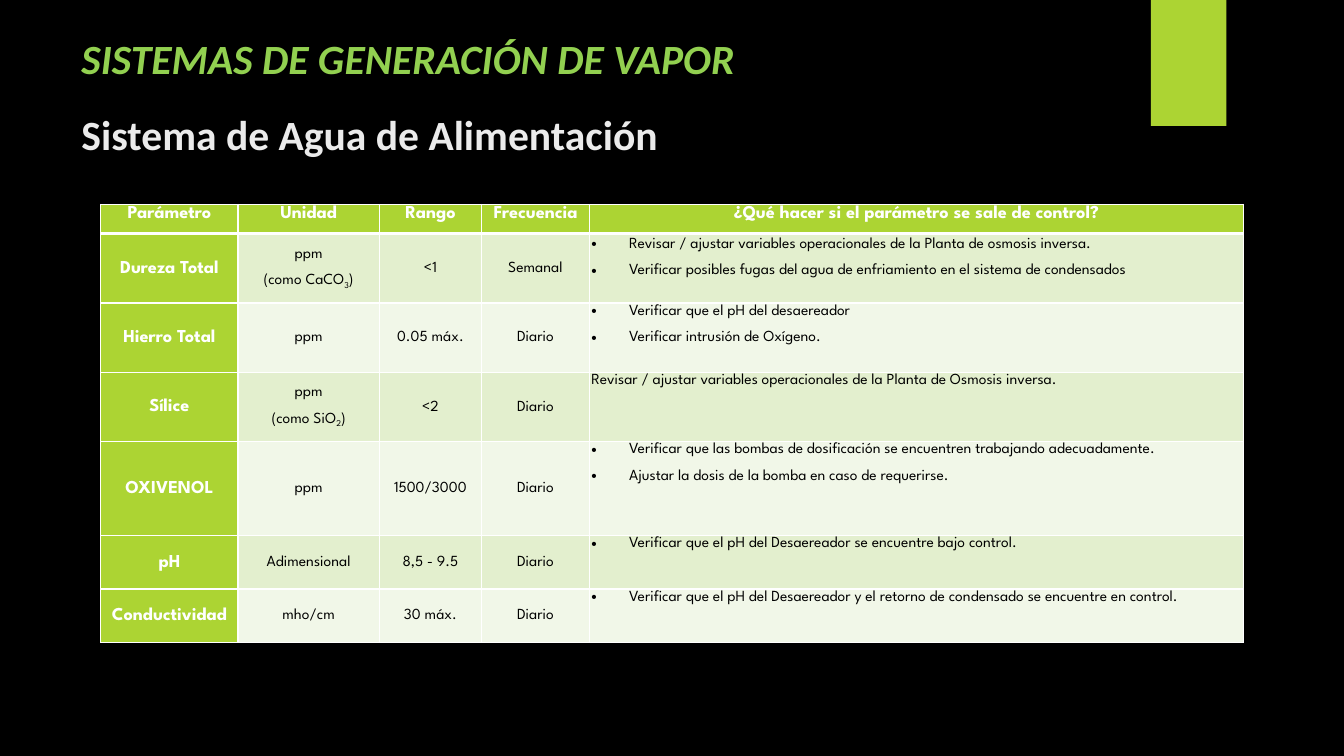
from lxml.etree import SubElement
from pptx import Presentation
from pptx.dml.color import RGBColor
from pptx.enum.shapes import MSO_SHAPE
from pptx.enum.text import MSO_ANCHOR, PP_ALIGN
from pptx.oxml.ns import qn
from pptx.util import Pt

BLACK = RGBColor(0x00, 0x00, 0x00)
WHITE = RGBColor(0xFF, 0xFF, 0xFF)
LIME = RGBColor(0xAC, 0xD4, 0x33)
TITLE_GREEN = RGBColor(0x92, 0xD0, 0x50)
TITLE_GREY = RGBColor(0xEB, 0xEB, 0xEB)
BANDS = (RGBColor(0xE3, 0xEF, 0xCE), RGBColor(0xF1, 0xF7, 0xE8))

HEADER_RULE = 2
COL_WIDTHS = (98, 101, 73, 77, 467)
ROW_HEIGHTS = (20.9, 49.5, 49.5, 49.5, 67, 38.3, 38.3)
HEADER = ("Parámetro", "Unidad", "Rango", "Frecuencia",
          "¿Qué hacer si el parámetro se sale de control?")
# An underscore puts the next character in subscript.
PARAMETERS = (
    ("Dureza Total", ["ppm", "(como CaCO_3)"], "<1", "Semanal",
     ["Revisar / ajustar variables operacionales de la Planta de osmosis inversa.",
      "Verificar posibles fugas del agua de enfriamiento en el sistema de condensados"]),
    ("Hierro Total", ["ppm"], "0.05 máx.", "Diario",
     ["Verificar que el pH del desaereador", "Verificar intrusión de Oxígeno."]),
    ("Sílice", ["ppm", "(como SiO_2)"], "<2", "Diario",
     "Revisar / ajustar variables operacionales de la Planta de Osmosis inversa."),
    ("OXIVENOL", ["ppm"], "1500/3000", "Diario",
     ["Verificar que las bombas de dosificación se encuentren trabajando adecuadamente.",
      "Ajustar la dosis de la bomba en caso de requerirse."]),
    ("pH", ["Adimensional"], "8,5 - 9.5", "Diario",
     ["Verificar que el pH del Desaereador se encuentre bajo control."]),
    ("Conductividad", ["mho/cm"], "30 máx.", "Diario",
     ["Verificar que el pH del Desaereador y el retorno de condensado se encuentre en control."]),
)


def add_bullet(p):
    pPr = p._p.get_or_add_pPr()
    pPr.set("marL", str(Pt(27)))
    pPr.set("indent", str(-Pt(27)))
    SubElement(pPr, qn("a:buFont"), typeface="Arial")
    SubElement(pPr, qn("a:buChar"), char="•")


def write(p, text, *, font="League Spartan", size=11, color=BLACK, bold=False,
          italic=False, align=PP_ALIGN.CENTER, spacing=1.07, before=None,
          after=8, bullet=False):
    p.alignment = align
    p.line_spacing = spacing
    if before is not None:
        p.space_before = Pt(before)
    p.space_after = Pt(after)
    if bullet:
        add_bullet(p)
    base, _, tail = text.partition("_")
    for part, is_sub in ((base, False), (tail[:1], True), (tail[1:], False)):
        if not part:
            continue
        r = p.add_run()
        r.text = part
        r.font.name = font
        r.font.size = Pt(size)
        r.font.bold = bold
        r.font.italic = italic
        r.font.color.rgb = color
        if is_sub:
            r._r.get_or_add_rPr().set("baseline", "-25000")


def set_borders(cell, top, bottom):
    tcPr = cell._tc.get_or_add_tcPr()
    for side, width in (("L", 1), ("R", 1), ("T", top), ("B", bottom)):
        ln = SubElement(tcPr, qn(f"a:ln{side}"), w=str(Pt(width)))
        fill = SubElement(ln, qn("a:solidFill"))
        SubElement(fill, qn("a:srgbClr"), val=str(WHITE))


def fill_cell(cell, lines, fill, *, anchor=MSO_ANCHOR.MIDDLE, top=1, bottom=1,
              margin_top=0, **fmt):
    set_borders(cell, top, bottom)
    cell.fill.solid()
    cell.fill.fore_color.rgb = fill
    cell.vertical_anchor = anchor
    cell.margin_left = cell.margin_right = Pt(1.4)
    cell.margin_top = Pt(margin_top)
    cell.margin_bottom = 0
    tf = cell.text_frame
    for i, line in enumerate([lines] if isinstance(lines, str) else lines):
        write(tf.paragraphs[0] if i == 0 else tf.add_paragraph(), line, **fmt)


def add_title(s):
    title = s.shapes.title
    title.left, title.top, title.width, title.height = Pt(51), Pt(24), Pt(741), Pt(110)
    tf = title.text_frame
    tf.word_wrap = True
    tf.vertical_anchor = MSO_ANCHOR.TOP
    fmt = dict(font="Calibri", size=29.7, bold=True, align=PP_ALIGN.LEFT,
               spacing=0.9, after=0)
    write(tf.paragraphs[0], "SISTEMAS DE GENERACIÓN DE VAPOR",
          color=TITLE_GREEN, italic=True, **fmt)
    write(tf.add_paragraph(), "Sistema de Agua de Alimentación",
          color=TITLE_GREY, before=22, **fmt)


def add_corner_tab(s):
    tab = s.shapes.add_shape(MSO_SHAPE.RECTANGLE, Pt(822), 0, Pt(54), Pt(90))
    tab.shadow.inherit = False
    tab.fill.solid()
    tab.fill.fore_color.rgb = LIME
    tab.line.fill.background()


def add_parameter_table(s):
    table = s.shapes.add_table(len(ROW_HEIGHTS), len(COL_WIDTHS), Pt(72), Pt(146),
                               Pt(sum(COL_WIDTHS)), Pt(sum(ROW_HEIGHTS))).table
    table.horz_banding = False
    for column, width in zip(table.columns, COL_WIDTHS):
        column.width = Pt(width)
    for row, height in zip(table.rows, ROW_HEIGHTS):
        row.height = Pt(height)

    heading = dict(size=13, color=WHITE, bold=True)
    for col, text in enumerate(HEADER):
        fill_cell(table.cell(0, col), text, LIME, anchor=MSO_ANCHOR.TOP,
                  bottom=HEADER_RULE, **heading)
    for row, (name, *values, actions) in enumerate(PARAMETERS, start=1):
        band = BANDS[(row - 1) % 2]
        top = HEADER_RULE if row == 1 else 1
        fill_cell(table.cell(row, 0), name, LIME, top=top, **heading)
        for col, value in enumerate(values, start=1):
            fill_cell(table.cell(row, col), value, band, top=top)
        fill_cell(table.cell(row, len(HEADER) - 1), actions, band, top=top,
                  margin_top=2 if row == 1 else 0.5, anchor=MSO_ANCHOR.TOP,
                  align=PP_ALIGN.JUSTIFY, bullet=isinstance(actions, list))


def main():
    prs = Presentation()
    prs.slide_width, prs.slide_height = Pt(960), Pt(540)
    s = prs.slides.add_slide(prs.slide_layouts[5])
    s.background.fill.solid()
    s.background.fill.fore_color.rgb = BLACK
    add_corner_tab(s)
    add_title(s)
    add_parameter_table(s)
    prs.save("out.pptx")


if __name__ == "__main__":
    main()
